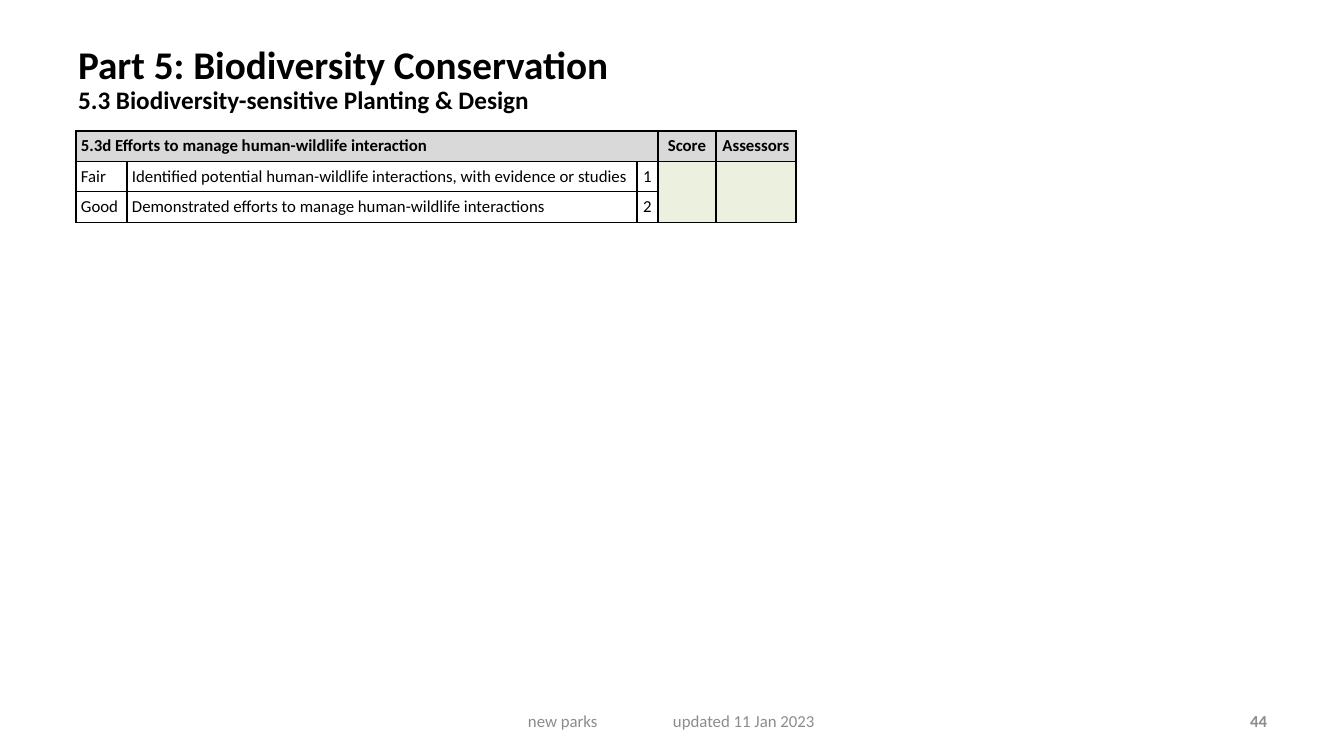
from lxml.etree import SubElement
from pptx import Presentation
from pptx.dml.color import RGBColor
from pptx.enum.text import MSO_ANCHOR as Anchor, PP_ALIGN as Align
from pptx.oxml.ns import qn
from pptx.util import Emu, Pt

BLACK = RGBColor(0x00, 0x00, 0x00)
FOOTER_GREY = RGBColor(0x8C, 0x8C, 0x8C)
HEADER_GREY = RGBColor(0xD9, 0xD9, 0xD9)
SCORE_GREEN = RGBColor(0xEB, 0xF1, 0xDE)

COLUMN_WIDTHS = [51, 510, 21, 58, 80]
ROW_HEIGHT = 30
CRITERIA = [
    ["5.3d Efforts to manage human-wildlife interaction", "", "", "Score", "Assessors"],
    ["Fair", "Identified potential human-wildlife interactions, with evidence or studies", "1", "", ""],
    ["Good", "Demonstrated efforts to manage human-wildlife interactions", "2", "", ""],
]


def px(length):
    return Emu(round(length * 914400 / 100.8))


class SlideBuilder:
    font_name = "Calibri"
    body_size = 12

    def __init__(self, slide):
        self.slide = slide

    def add_run(self, paragraph, text, size=body_size, color=BLACK, bold=False):
        run = paragraph.add_run()
        run.text = text
        run.font.name = self.font_name
        run.font.size = Pt(size)
        run.font.bold = bold
        run.font.color.rgb = color

    def title(self, heading, subheading, left, top, width, height):
        shape = self.slide.shapes.title
        shape.left, shape.top, shape.width, shape.height = map(px, (left, top, width, height))
        shape.text_frame.vertical_anchor = Anchor.MIDDLE
        paragraph = shape.text_frame.paragraphs[0]
        paragraph.alignment = Align.LEFT
        paragraph.line_spacing = 0.9
        self.add_run(paragraph, heading, 28, bold=True)
        paragraph.add_line_break()
        self.add_run(paragraph, subheading, 18, bold=True)

    def footer(self, text, left, width, align=Align.LEFT, bold=False, indent=10, tab=None):
        box = self.slide.shapes.add_textbox(px(left), px(701), px(width), px(40))
        frame = box.text_frame
        frame.word_wrap = True
        frame.vertical_anchor = Anchor.MIDDLE
        frame.margin_left = px(indent)
        paragraph = frame.paragraphs[0]
        paragraph.alignment = align
        if tab:
            tab_list = SubElement(paragraph._p.get_or_add_pPr(), qn("a:tabLst"))
            SubElement(tab_list, qn("a:tab"), pos=str(px(tab)), algn="l")
        self.add_run(paragraph, text, color=FOOTER_GREY, bold=bold)

    def add_borders(self, cell):
        properties = cell._tc.get_or_add_tcPr()
        for side in ("L", "R", "T", "B"):
            line = SubElement(properties, qn(f"a:ln{side}"), w=str(Pt(1)))
            fill = SubElement(line, qn("a:solidFill"))
            SubElement(fill, qn("a:srgbClr"), val=str(BLACK))

    def fill_cell(self, cell, text, fill, align, bold):
        cell.margin_left = cell.margin_right = px(5)
        cell.margin_top = cell.margin_bottom = px(5)
        cell.vertical_anchor = Anchor.MIDDLE
        self.add_borders(cell)
        if fill:
            cell.fill.solid()
            cell.fill.fore_color.rgb = fill
        else:
            cell.fill.background()
        paragraph = cell.text_frame.paragraphs[0]
        paragraph.alignment = align
        if text:
            self.add_run(paragraph, text, bold=bold)
        else:
            end = SubElement(paragraph._p, qn("a:endParaRPr"))
            end.set("sz", str(self.body_size * 100))

    def score_table(self, rows, left, top):
        """Draw a grey header row, then criteria with shared score cells on the right."""
        frame = self.slide.shapes.add_table(
            len(rows), len(COLUMN_WIDTHS), px(left), px(top),
            px(sum(COLUMN_WIDTHS)), px(ROW_HEIGHT * len(rows)))
        table = frame.table
        for column, width in zip(table.columns, COLUMN_WIDTHS):
            column.width = px(width)
        for row_index, texts in enumerate(rows):
            table.rows[row_index].height = px(ROW_HEIGHT)
            is_header = row_index == 0
            for column_index, text in enumerate(texts):
                score_fill = SCORE_GREEN if column_index >= 3 else None
                self.fill_cell(
                    table.cell(row_index, column_index), text,
                    HEADER_GREY if is_header else score_fill,
                    Align.CENTER if column_index >= 2 else Align.LEFT, is_header)
        table.cell(0, 0).merge(table.cell(0, 2))
        for column_index in (3, 4):
            table.cell(1, column_index).merge(table.cell(len(rows) - 1, column_index))


def main():
    presentation = Presentation()
    presentation.slide_width, presentation.slide_height = px(1344), px(756)
    builder = SlideBuilder(presentation.slides.add_slide(presentation.slide_layouts[5]))
    builder.title("Part 5: Biodiversity Conservation",
                  "5.3 Biodiversity-sensitive Planting & Design", 68, 30, 1044, 100)
    builder.score_table(CRITERIA, 76, 131)
    builder.footer("new parks\tupdated 11 Jan 2023", 460, 425, indent=68, tab=145)
    builder.footer("44", 964, 313, align=Align.RIGHT, bold=True)
    presentation.save("out.pptx")


if __name__ == "__main__":
    main()
